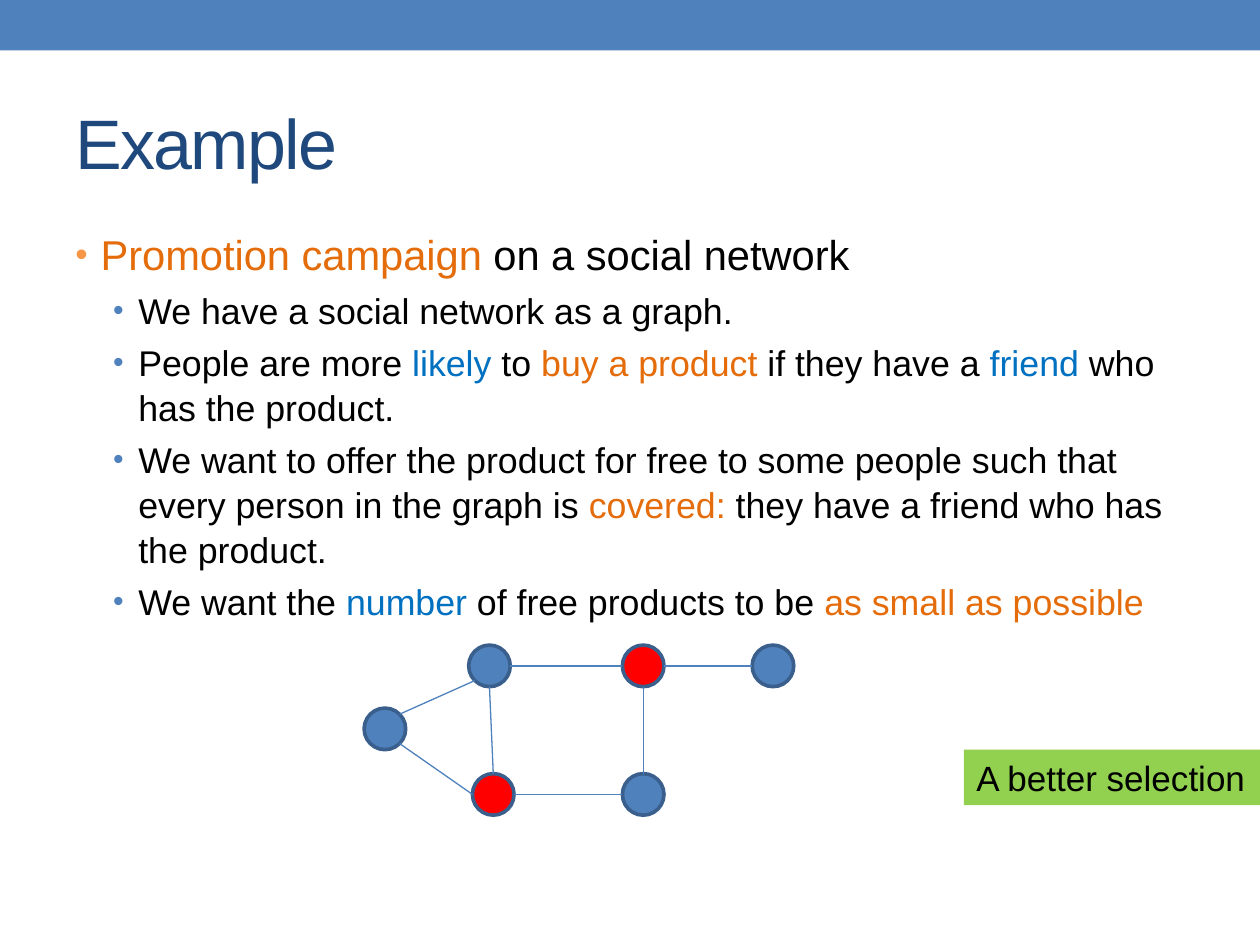
from dataclasses import dataclass

from lxml import etree
from pptx import Presentation
from pptx.dml.color import RGBColor
from pptx.enum.shapes import MSO_CONNECTOR, MSO_SHAPE
from pptx.enum.text import MSO_ANCHOR
from pptx.oxml.ns import qn
from pptx.util import Inches, Pt

RECTANGLE = MSO_SHAPE.RECTANGLE
OVAL = MSO_SHAPE.OVAL
STRAIGHT = MSO_CONNECTOR.STRAIGHT
MIDDLE = MSO_ANCHOR.MIDDLE

FONT = "Arial"
BLUE, NAVY, RED, GREEN = "4F81BD", "1F497D", "FF0000", "92D050"
BLACK, ORANGE, SKY = "000000", "E46C0A", "0070C0"
OUTLINE, BULLET_ORANGE = "3A5F8C", "F79646"
DIAMETER = 0.33
DIAGONAL = 0.7071
SIDES = {
    "right": (1, 0),
    "left": (-1, 0),
    "top": (0, -1),
    "bottom": (0, 1),
    "top right": (DIAGONAL, -DIAGONAL),
    "bottom right": (DIAGONAL, DIAGONAL),
    "bottom left": (-DIAGONAL, DIAGONAL),
}


@dataclass(frozen=True)
class Person:
    """A graph node, placed by its top left corner."""

    left: float
    top: float
    fill: str = BLUE

    def site(self, side: str) -> tuple:
        """Return the point on the circle at the named side."""
        radius = DIAMETER / 2
        across, down = SIDES[side]
        return (Inches(self.left + radius * (1 + across)),
                Inches(self.top + radius * (1 + down)))


@dataclass(frozen=True)
class Friendship:
    """A graph edge between named sides of two people."""

    start: str
    start_side: str
    end: str
    end_side: str


@dataclass(frozen=True)
class Level:
    """Text size, indent and bullet colour of an outline level."""

    size: float
    indent: float
    bullet: str


LEVELS = (Level(23.8, 0.2, BULLET_ORANGE), Level(20.4, 0.5, BLUE))

OUTLINE_TEXT = (
    (0, (("Promotion campaign ", ORANGE), ("on a social network", BLACK))),
    (1, (("We have a social network as a graph.", BLACK),)),
    (1, (("People are more ", BLACK), ("likely", SKY), (" to ", BLACK),
         ("buy a product ", ORANGE), ("if they have a ", BLACK),
         ("friend", SKY), (" who has the product.", BLACK))),
    (1, (("We want to offer the product for free to some people such that "
          "every person in the graph is ", BLACK), ("covered: ", ORANGE),
         ("they have a friend who has the product.", BLACK))),
    (1, (("We want the ", BLACK), ("number", SKY),
         (" of free products to be ", BLACK),
         ("as small as possible", ORANGE))),
)

PEOPLE = {
    "west": Person(2.89, 5.62),
    "upper left": Person(3.72, 5.12),
    "lower left": Person(3.75, 6.14, RED),
    "upper middle": Person(4.94, 5.12, RED),
    "upper right": Person(5.97, 5.12),
    "lower middle": Person(4.94, 6.14),
}

FRIENDSHIPS = (
    Friendship("upper left", "right", "upper middle", "left"),
    Friendship("upper left", "bottom", "lower left", "top"),
    Friendship("lower left", "right", "lower middle", "left"),
    Friendship("lower middle", "top", "upper middle", "bottom"),
    Friendship("upper middle", "right", "upper right", "left"),
    Friendship("west", "top right", "upper left", "bottom left"),
    Friendship("west", "bottom right", "lower left", "left"),
)


def color(value: str) -> RGBColor:
    """Turn a hex string into a colour."""
    return RGBColor.from_string(value)


def style(span, size: float, value: str) -> None:
    """Set the font, size and colour of a run."""
    span.font.name = FONT
    span.font.size = Pt(size)
    span.font.color.rgb = color(value)


def add_filled(page, kind, left: float, top: float, width: float,
               height: float, fill: str):
    """Add a flat preset shape without an outline."""
    shape = page.shapes.add_shape(kind, Inches(left), Inches(top),
                                  Inches(width), Inches(height))
    shape.shadow.inherit = False
    shape.fill.solid()
    shape.fill.fore_color.rgb = color(fill)
    shape.line.fill.background()
    return shape


def add_person(page, person: Person) -> None:
    """Draw a graph node."""
    circle = add_filled(page, OVAL, person.left, person.top,
                        DIAMETER, DIAMETER, person.fill)
    circle.line.color.rgb = color(OUTLINE)
    circle.line.width = Pt(2.08)


def add_friendship(page, edge: Friendship) -> None:
    """Draw a graph edge."""
    start = PEOPLE[edge.start].site(edge.start_side)
    end = PEOPLE[edge.end].site(edge.end_side)
    line = page.shapes.add_connector(STRAIGHT, *start, *end)
    line.line.color.rgb = color(BLUE)
    line.line.width = Pt(0.75)
    etree.SubElement(line._element.spPr, qn("a:effectLst"))


def add_title(page) -> None:
    """Write the slide title with tightened letters."""
    box = page.shapes.add_textbox(Inches(0.5), Inches(0.58),
                                  Inches(9), Inches(1.08))
    frame = box.text_frame
    frame.word_wrap = True
    frame.vertical_anchor = MIDDLE
    frame.text = "Example"
    span = frame.paragraphs[0].runs[0]
    style(span, 40, NAVY)
    span.font._element.set("spc", "-100")


def set_bullet(para, level: Level) -> None:
    """Give a paragraph its hanging indent and bullet."""
    properties = para._p.get_or_add_pPr()
    properties.set("marL", str(Inches(level.indent)))
    properties.set("indent", str(Inches(-0.2)))
    tint = etree.SubElement(properties, qn("a:buClr"))
    etree.SubElement(tint, qn("a:srgbClr"), val=level.bullet)
    etree.SubElement(properties, qn("a:buSzPct"), val="85000")
    etree.SubElement(properties, qn("a:buFont"), typeface=FONT)
    etree.SubElement(properties, qn("a:buChar"), char="•")


def add_outline(page) -> None:
    """Write the bulleted description of the problem."""
    box = page.shapes.add_textbox(Inches(0.5), Inches(1.75),
                                  Inches(9), Inches(2.83))
    frame = box.text_frame
    frame.word_wrap = True
    for index, (depth, pieces) in enumerate(OUTLINE_TEXT):
        level = LEVELS[depth]
        para = frame.add_paragraph() if index else frame.paragraphs[0]
        para.level = depth
        para.line_spacing = 1.05
        para.space_before = Pt(round(level.size * 0.2, 1))
        set_bullet(para, level)
        for words, value in pieces:
            span = para.add_run()
            span.text = words
            style(span, level.size, value)


def add_note(page) -> None:
    """Draw the green remark at the right edge."""
    note = add_filled(page, RECTANGLE, 7.65, 5.95, 2.35, 0.44, GREEN)
    frame = note.text_frame
    frame.word_wrap = False
    frame.text = "A better selection"
    style(frame.paragraphs[0].runs[0], 20, BLACK)


def main() -> None:
    """Build and save the slide."""
    deck = Presentation()
    deck.slide_width, deck.slide_height = Inches(10), Inches(7.5)
    page = deck.slides.add_slide(deck.slide_layouts[6])
    add_filled(page, RECTANGLE, 0, 0, 10, 0.4, BLUE)
    add_title(page)
    for person in PEOPLE.values():
        add_person(page, person)
    for edge in FRIENDSHIPS:
        add_friendship(page, edge)
    add_note(page)
    add_outline(page)
    deck.save("out.pptx")


if __name__ == "__main__":
    main()
